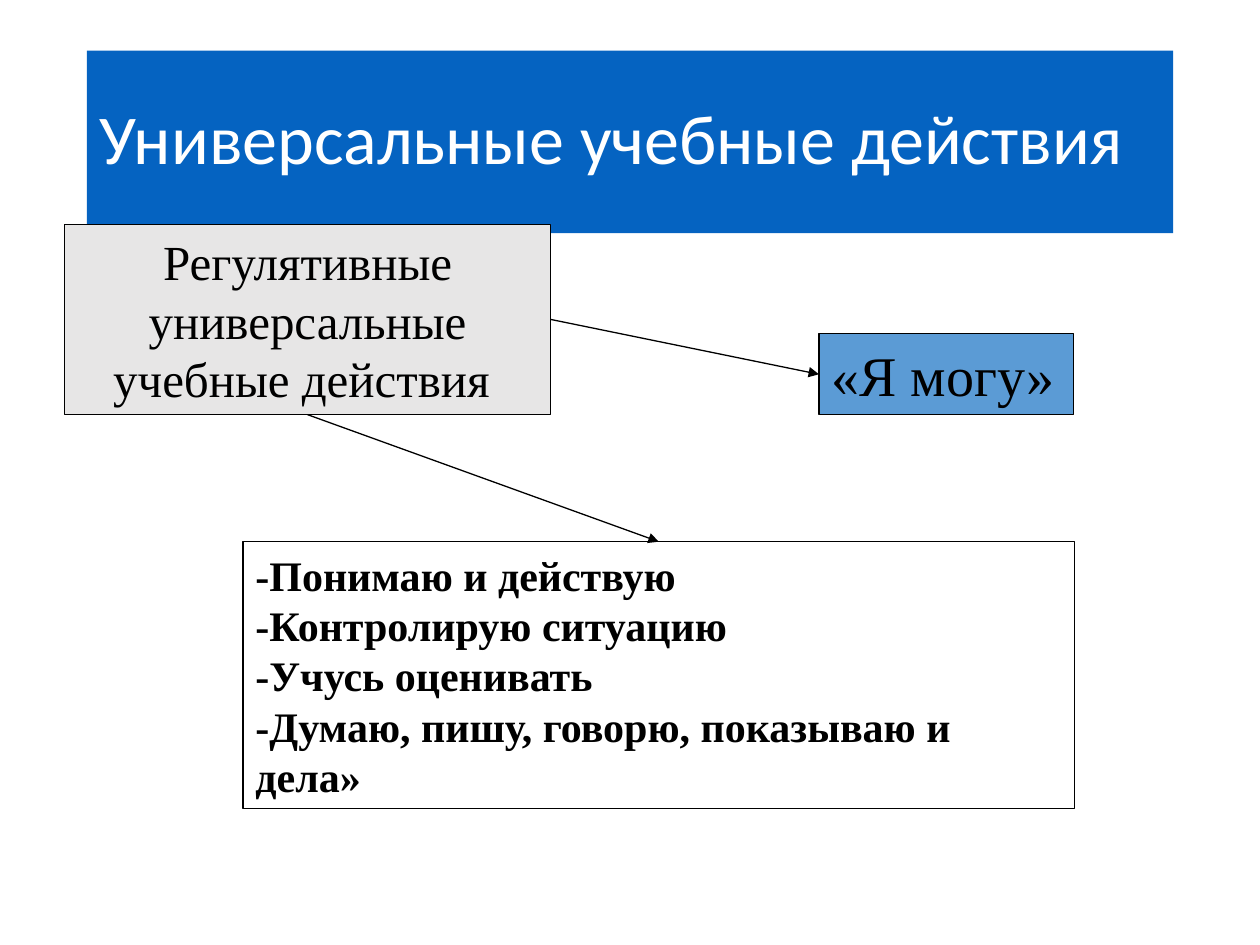
from dataclasses import dataclass

from lxml import etree
from pptx import Presentation
from pptx import util as u
from pptx.dml.color import RGBColor
from pptx.enum import shapes, text
from pptx.oxml import ns


@dataclass(frozen=True)
class Theme:
    title_fill: str = "0563C1"
    title_text: str = "FFFFFF"
    ink: str = "000000"
    title_font: str = "Calibri"
    body_font: str = "Times New Roman"
    title_size: int = 40
    line_width: float = 0.75


THEME = Theme()
ALIGN = text.PP_ALIGN
TITLE = {"text": "Универсальные учебные действия", "at": (1.75, 1.02, 21.9, 3.68)}
BOXES = {
    "actions": {
        "at": (1.3, 4.52, 9.8, 3.84), "fill": "E7E6E6", "size": 28, "bold": False,
        "align": ALIGN.CENTER, "wrap": True,
        "lines": ["Регулятивные универсальные учебные действия "],
    },
    "skills": {
        "at": (4.9, 10.92, 16.76, 5.38), "fill": "FFFFFF", "size": 24, "bold": True,
        "align": ALIGN.LEFT, "wrap": True,
        "lines": [
            "-Понимаю и действую",
            "-Контролирую ситуацию",
            "-Учусь оценивать",
            "-Думаю, пишу, говорю, показываю и дела»",
        ],
    },
    "motto": {
        "at": (16.51, 6.73, 5.13, 1.63), "fill": "5B9BD5", "size": 32, "bold": False,
        "align": ALIGN.JUSTIFY, "wrap": False,
        "lines": ["«Я могу»"],
    },
}
TOP, LEFT, BOTTOM, RIGHT = range(4)
ARROWS = [("actions", RIGHT, "motto", LEFT), ("actions", BOTTOM, "skills", TOP)]


def color(value):
    return RGBColor.from_string(value)


def place(shape, at):
    shape.left, shape.top, shape.width, shape.height = map(u.Cm, at)


def paint(shape, fill):
    shape.fill.solid()
    shape.fill.fore_color.rgb = color(fill)


def outline(line):
    line.color.rgb = color(THEME.ink)
    line.width = u.Pt(THEME.line_width)


def write(frame, lines, font_name, size, ink, align, bold=False):
    for index, words in enumerate(lines):
        paragraph = frame.paragraphs[0] if index == 0 else frame.add_paragraph()
        paragraph.alignment = align
        run = paragraph.add_run()
        run.text = words
        run.font.name = font_name
        run.font.size = u.Pt(size)
        run.font.bold = bold
        run.font.color.rgb = color(ink)


def add_title(slide):
    title = slide.shapes.title
    place(title, TITLE["at"])
    paint(title, THEME.title_fill)
    frame = title.text_frame
    frame.word_wrap = True
    frame.auto_size = text.MSO_AUTO_SIZE.NONE
    frame.vertical_anchor = text.MSO_ANCHOR.MIDDLE
    write(frame, [TITLE["text"]], THEME.title_font, THEME.title_size,
          THEME.title_text, ALIGN.LEFT)
    frame.paragraphs[0].line_spacing = 0.9


def add_box(slide, box):
    shape = slide.shapes.add_shape(shapes.MSO_SHAPE.RECTANGLE, *map(u.Cm, box["at"]))
    shape.shadow.inherit = False
    paint(shape, box["fill"])
    outline(shape.line)
    frame = shape.text_frame
    frame.word_wrap = box["wrap"]
    frame.auto_size = text.MSO_AUTO_SIZE.SHAPE_TO_FIT_TEXT
    frame.vertical_anchor = text.MSO_ANCHOR.MIDDLE
    write(frame, box["lines"], THEME.body_font, box["size"], THEME.ink,
          box["align"], box["bold"])
    return shape


def add_arrow(slide, start, start_side, end, end_side):
    arrow = slide.shapes.add_connector(shapes.MSO_CONNECTOR.STRAIGHT, 0, 0, 0, 0)
    arrow.begin_connect(start, start_side)
    arrow.end_connect(end, end_side)
    outline(arrow.line)
    properties = arrow.line._get_or_add_ln()
    etree.SubElement(properties, ns.qn("a:tailEnd"), type="triangle")
    etree.SubElement(properties.getparent(), ns.qn("a:effectLst"))


def main():
    presentation = Presentation()
    presentation.slide_width, presentation.slide_height = u.Cm(25.4), u.Cm(19.05)
    slide = presentation.slides.add_slide(presentation.slide_layouts.get_by_name("Title Only"))
    add_title(slide)
    boxes = {name: add_box(slide, box) for name, box in BOXES.items()}
    for start, start_side, end, end_side in ARROWS:
        add_arrow(slide, boxes[start], start_side, boxes[end], end_side)
    presentation.save("out.pptx")


if __name__ == "__main__":
    main()
